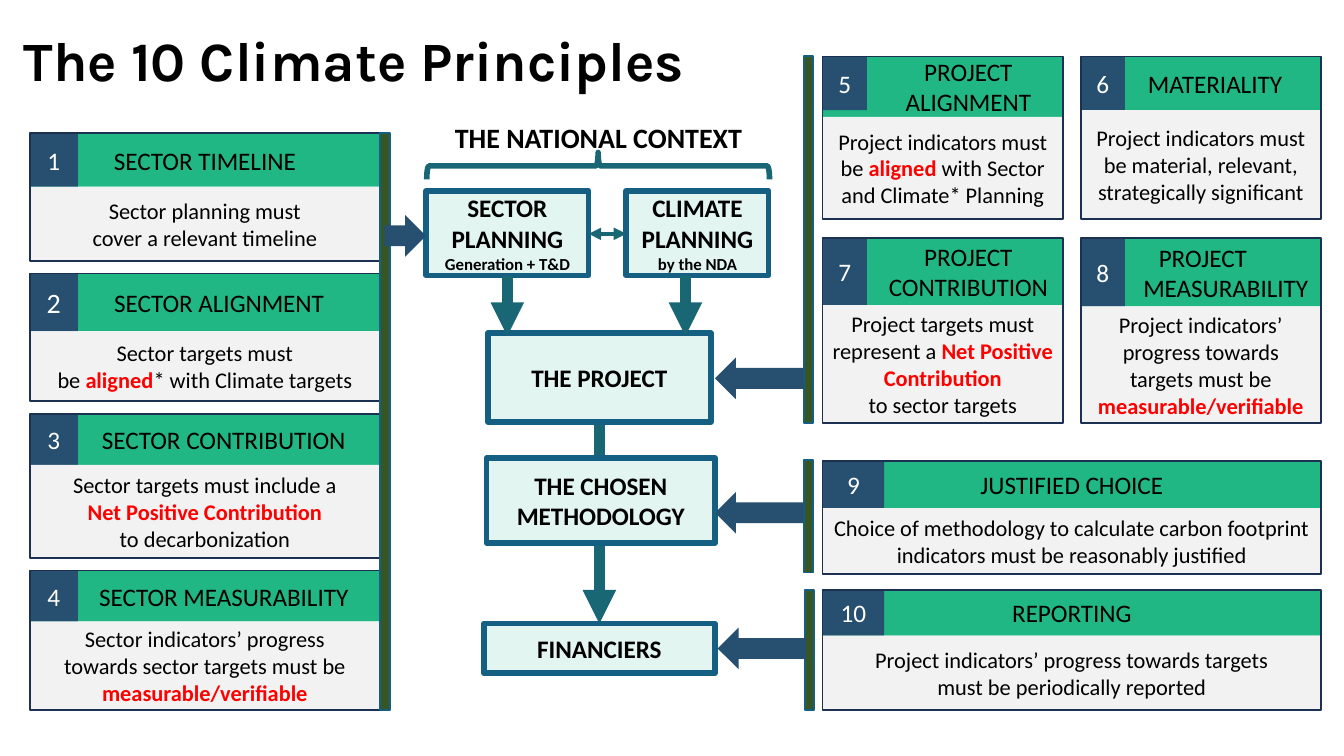
from dataclasses import dataclass
from itertools import cycle

from lxml.etree import SubElement
from pptx import Presentation
from pptx.dml.color import RGBColor
from pptx.enum.shapes import MSO_CONNECTOR, MSO_SHAPE
from pptx.enum.text import MSO_ANCHOR, PP_ALIGN
from pptx.oxml.ns import qn
from pptx.util import Inches, Pt

SLIDE_WIDTH, SLIDE_HEIGHT = Inches(10), Inches(5.625)
GRID_COLUMNS = 100

BLACK = RGBColor(0x00, 0x00, 0x00)
WHITE = RGBColor(0xFF, 0xFF, 0xFF)
RED = RGBColor(0xFF, 0x00, 0x00)
GREEN = RGBColor(0x21, 0xB7, 0x84)
NAVY = RGBColor(0x26, 0x4F, 0x70)
CARD_EDGE = RGBColor(0x1C, 0x30, 0x52)
LIGHT_GREY = RGBColor(0xF2, 0xF2, 0xF2)
MINT = RGBColor(0xE3, 0xF5, 0xF0)
BLUE = RGBColor(0x15, 0x60, 0x82)
TEAL = RGBColor(0x19, 0x67, 0x74)
OLIVE = RGBColor(0x38, 0x56, 0x23)

HEADING_SIZE = 13.5
BODY_SIZE = 12


@dataclass
class Card:
    """A numbered principle; lengths are in grid cells, |bars| mark emphasis."""
    number: int
    heading: list
    body: list
    height: float
    heading_height: float
    indents: tuple = (0,)
    badge_height: float = 0
    number_size: float = HEADING_SIZE


SECTOR_CARDS = [
    Card(1, ["SECTOR TIMELINE"],
         ["Sector planning must", "cover a relevant timeline"], 9.5, 4),
    Card(2, ["SECTOR ALIGNMENT"],
         ["Sector targets must", "be |aligned|* with Climate targets"],
         9.5, 4.3, (2.1,), number_size=15),
    Card(3, ["SECTOR CONTRIBUTION"],
         ["Sector targets must include a", "|Net Positive Contribution|",
          "to decarbonization"], 10.7, 3.8, (2.8,)),
    Card(4, ["SECTOR MEASURABILITY"],
         ["Sector indicators’ progress",
          "towards sector targets must be |measurable/verifiable|"],
         10.4, 3.8, (2.8,)),
]
PROJECT_CARDS_LEFT = [
    Card(5, ["PROJECT ALIGNMENT"],
         ["Project indicators must be |aligned| with Sector and Climate* Planning"],
         12.1, 4.5, (3.8,), badge_height=4),
    Card(7, ["PROJECT CONTRIBUTION"],
         ["Project targets must represent a |Net Positive Contribution|",
          "to sector targets"], 13.8, 5, (3.8,)),
]
PROJECT_CARDS_RIGHT = [
    Card(6, ["MATERIALITY"],
         ["Project indicators must be material, relevant, strategically significant"],
         12.1, 4, (2.1,)),
    Card(8, ["PROJECT", "MEASURABILITY"],
         ["Project indicators’ progress towards targets must be |measurable/verifiable|"],
         13.8, 5.1, (0.3, 3.7)),
]
METHOD_CARDS = [
    Card(9, ["JUSTIFIED CHOICE"],
         ["Choice of methodology to calculate carbon footprint indicators "
          "must be reasonably justified"], 8.4, 3.5),
    Card(10, ["REPORTING"],
         ["Project indicators’ progress towards targets",
          "must be periodically reported"], 8.9, 3.4),
]


def cells(count):
    return int(SLIDE_WIDTH * count / GRID_COLUMNS)


def place(*box):
    return [cells(length) for length in box]


def write_text(frame, lines, sizes=(BODY_SIZE,), indents=(0,), color=BLACK,
               bold=False, font="Calibri", align=PP_ALIGN.CENTER,
               anchor=MSO_ANCHOR.MIDDLE, line_spacing=None):
    """Fill a text frame; parts between bars become bold and red."""
    frame.word_wrap = True
    frame.vertical_anchor = anchor
    frame.margin_left = frame.margin_right = cells(0.75)
    frame.margin_top = frame.margin_bottom = cells(0.38)
    for index, (line, size, indent) in enumerate(zip(lines, cycle(sizes), cycle(indents))):
        paragraph = frame.add_paragraph() if index else frame.paragraphs[0]
        paragraph.alignment = align
        paragraph.line_spacing = line_spacing
        if indent:
            paragraph._p.get_or_add_pPr().set("marL", str(cells(indent)))
        for part, words in enumerate(line.split("|")):
            if not words:
                continue
            emphasised = part % 2 == 1
            run = paragraph.add_run()
            run.text = words
            run.font.name = font
            run.font.size = Pt(size)
            run.font.bold = bold or emphasised
            run.font.color.rgb = RED if emphasised else color


def add_block(slide, box, fill=None, edge=None, edge_width=1,
              preset=MSO_SHAPE.RECTANGLE, rotation=0):
    block = slide.shapes.add_shape(preset, *place(*box))
    block.shadow.inherit = False
    block.rotation = rotation
    if fill is None:
        block.fill.background()
    else:
        block.fill.solid()
        block.fill.fore_color.rgb = fill
    if edge is None:
        block.line.fill.background()
    else:
        block.line.color.rgb = edge
        block.line.width = Pt(edge_width)
    return block


def add_card(slide, card, left, top, width, badge_width):
    heading_height = card.heading_height
    heading = add_block(slide, (left, top, width, heading_height), GREEN)
    write_text(heading.text_frame, card.heading, (HEADING_SIZE,), card.indents)
    badge = add_block(
        slide, (left, top, badge_width, card.badge_height or heading_height), NAVY)
    write_text(badge.text_frame, [str(card.number)], (card.number_size,), color=WHITE)
    body = add_block(slide, (left, top + heading_height, width,
                             card.height - heading_height), LIGHT_GREY)
    write_text(body.text_frame, card.body)
    add_block(slide, (left, top, width, card.height), edge=CARD_EDGE)


def stack_cards(slide, cards, left, top, width, badge_width, gap):
    for card in cards:
        add_card(slide, card, left, top, width, badge_width)
        top += card.height + gap


def add_stage(slide, box, lines, sizes=(HEADING_SIZE,)):
    stage = add_block(slide, box, MINT, BLUE, 3)
    write_text(stage.text_frame, lines, sizes, bold=True)


def add_flow(slide, start, end, width=6, two_way=False):
    """Draw an arrow between two grid points."""
    flow = slide.shapes.add_connector(MSO_CONNECTOR.STRAIGHT, *place(*start, *end))
    flow.line.color.rgb = TEAL
    flow.line.width = Pt(width)
    properties = flow._element.spPr
    outline = properties.find(qn("a:ln"))
    for tag in ("a:headEnd", "a:tailEnd") if two_way else ("a:tailEnd",):
        SubElement(outline, qn(tag)).set("type", "triangle")
    SubElement(properties, qn("a:effectLst"))


def add_title(slide, text):
    title = slide.shapes.title
    title.left, title.top, title.width, title.height = place(1, 2.9, 75.7, 3.6)
    write_text(title.text_frame, [text], (29.7,), bold=True, font="Karla",
               align=PP_ALIGN.LEFT, line_spacing=0.9)


def add_national_context(slide):
    add_flow(slide, (44.6, 31.4), (44.6, 46.4))
    add_stage(slide, (31.7, 14.2, 12.1, 6.3),
              ["SECTOR PLANNING", "Generation + T&D"], (HEADING_SIZE, 9))
    add_stage(slide, (46.6, 14.2, 10.6, 6.3),
              ["CLIMATE PLANNING", "by the NDA"], (HEADING_SIZE, 9))
    add_stage(slide, (36.3, 24.8, 16.6, 6.6), ["THE PROJECT"])
    add_stage(slide, (36.2, 34.1, 17, 6.3), ["THE CHOSEN METHODOLOGY"])
    add_stage(slide, (36, 46.4, 17.2, 3.7), ["FINANCIERS"])
    brace = add_block(slide, (43.5, -0.4, 2, 25.5), edge=TEAL, edge_width=3,
                      preset=MSO_SHAPE.LEFT_BRACE, rotation=90)
    brace.adjustments[0], brace.adjustments[1] = 0.08, 0.5
    label = slide.shapes.add_textbox(*place(33.1, 8.6, 23.7, 3.3))
    write_text(label.text_frame, ["THE NATIONAL CONTEXT"], (15,), bold=True,
               align=PP_ALIGN.LEFT, anchor=MSO_ANCHOR.TOP)


def add_links(slide):
    """Add the rails beside the cards and the arrows into the central flow."""
    for left, top, height in ((28.3, 9.9, 42.9), (59.8, 4.2, 27.3),
                              (59.8, 34.2, 8.4), (59.9, 43.9, 8.9)):
        add_block(slide, (left, top, 0.7, height), OLIVE, BLUE)
    for left, top, width, rotation in ((28.6, 16, 3.1, 0), (53.2, 26.6, 6.6, 180),
                                       (53.2, 36.6, 6.6, 180), (53.4, 46.7, 6.6, 180)):
        add_block(slide, (left, top, width, 3.1), NAVY,
                  preset=MSO_SHAPE.RIGHT_ARROW, rotation=rotation)
    add_flow(slide, (37.75, 20.5), (37.75, 25))
    add_flow(slide, (51, 20.5), (51, 25))
    add_flow(slide, (43.8, 17.4), (46.6, 17.4), width=2.25, two_way=True)


def main():
    presentation = Presentation()
    presentation.slide_width, presentation.slide_height = SLIDE_WIDTH, SLIDE_HEIGHT
    slide = presentation.slides.add_slide(presentation.slide_layouts[5])
    add_title(slide, "The 10 Climate Principles")
    add_national_context(slide)
    stack_cards(slide, SECTOR_CARDS, 2.2, 9.9, 26.1, 3.6, gap=0.95)
    stack_cards(slide, PROJECT_CARDS_LEFT, 61.2, 4.2, 17.9, 3.3, gap=1.4)
    stack_cards(slide, PROJECT_CARDS_RIGHT, 80.4, 4.2, 17.9, 3.3, gap=1.4)
    stack_cards(slide, METHOD_CARDS, 61.2, 34.3, 37.1, 4.6, gap=1.2)
    add_links(slide)
    presentation.save("out.pptx")


if __name__ == "__main__":
    main()
